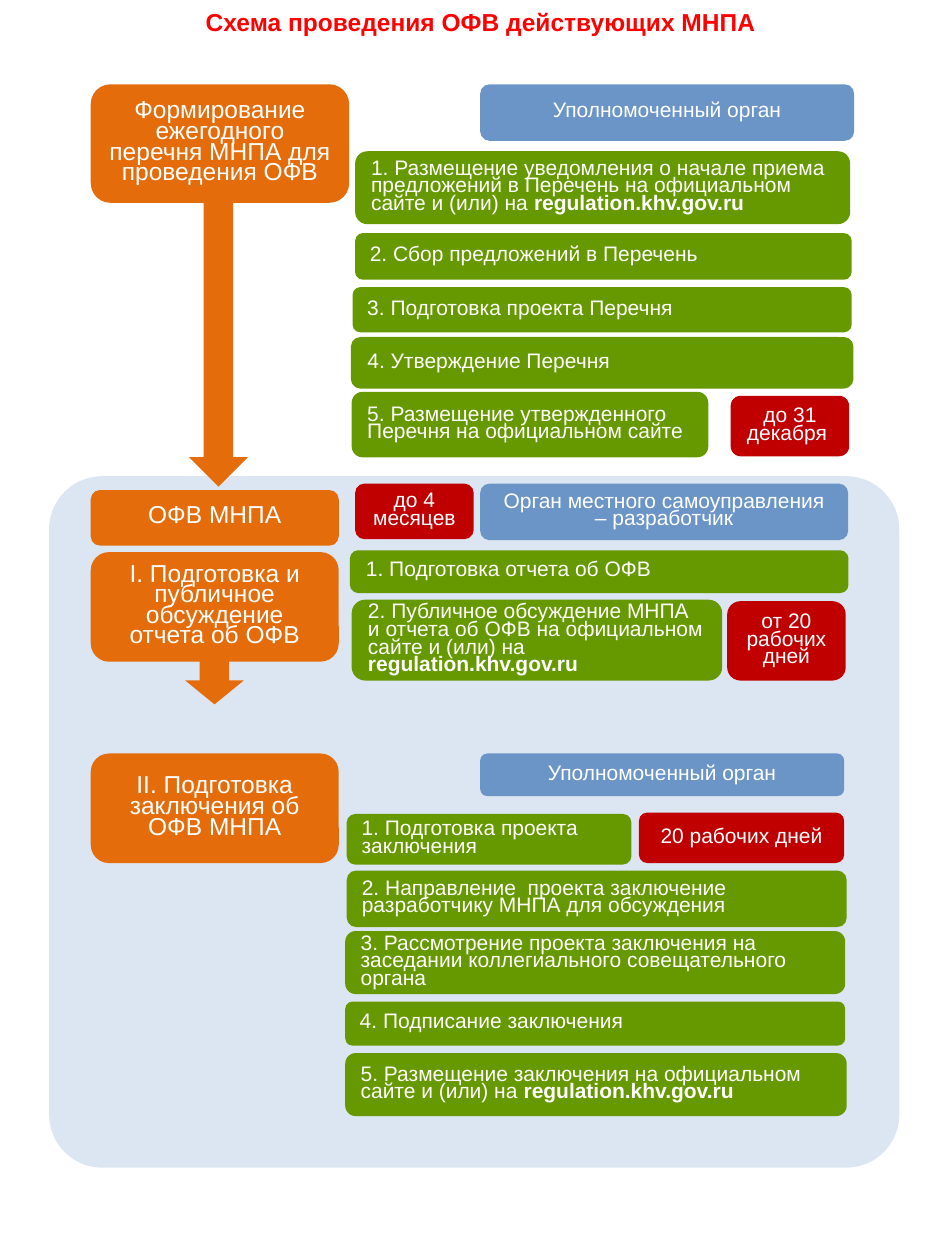
from typing import NamedTuple

from pptx import Presentation
from pptx import util as u
from pptx.dml.color import RGBColor
from pptx.enum import shapes, text

COLORS = {
    "panel": "DCE6F2",
    "stage": "E46C0A",
    "step": "669900",
    "body": "6B95C7",
    "term": "C00000",
    "title": "FF0000",
    "white": "FFFFFF",
}
SITE = "regulation.khv.gov.ru"
TITLE = "Схема проведения ОФВ действующих МНПА"
STAGE_LEFT, BODY_LEFT, TERM_WIDTH = 1.83, 9.68, 2.39
ARROW_WIDTH = 1.19


class Card(NamedTuple):
    kind: str
    left: float
    top: float
    width: float
    height: float
    words: str
    strong: str = ""
    outline: float = 0


class Arrow(NamedTuple):
    left: float
    top: float
    height: float


CARDS = [
    Card("stage", STAGE_LEFT, 1.7, 5.21, 2.39, "Формирование ежегодного перечня МНПА для проведения ОФВ"),
    Card("stage", STAGE_LEFT, 9.88, 5, 1.12, "ОФВ МНПА"),
    Card("stage", STAGE_LEFT, 11.13, 5, 2.21, "I. Подготовка и публичное обсуждение отчета об ОФВ"),
    Card("stage", STAGE_LEFT, 15.19, 5, 2.21, "II. Подготовка заключения об ОФВ МНПА"),
    Card("body", BODY_LEFT, 1.7, 7.54, 1.14, "Уполномоченный орган"),
    Card("step", 7.16, 3.05, 9.98, 1.47,
         "1. Размещение уведомления о начале приема предложений в Перечень на официальном сайте и (или) на ", SITE),
    Card("step", 7.16, 4.7, 10.01, 0.94, "2. Сбор предложений в Перечень"),
    Card("step", 7.11, 5.79, 10.06, 0.91, "3. Подготовка проекта Перечня"),
    Card("step", 7.11, 6.83, 10.06, 0.97, "4. Утверждение Перечня", outline=2),
    Card("step", 7.09, 7.9, 7.19, 1.32, "5. Размещение утвержденного Перечня на официальном сайте"),
    Card("term", 14.73, 7.98, TERM_WIDTH, 1.22, "до 31 декабря "),
    Card("term", 7.16, 9.75, TERM_WIDTH, 1.12, "до 4 месяцев"),
    Card("body", BODY_LEFT, 9.75, 7.42, 1.14, "Орган местного самоуправления – разработчик"),
    Card("step", 7.09, 11.13, 9.98, 0.79, "1. Подготовка отчета об ОФВ", outline=2),
    Card("step", 7.09, 12.09, 7.47, 1.63,
         "2. Публичное обсуждение МНПА и отчета об ОФВ на официальном сайте и (или) на ", SITE),
    Card("term", 14.66, 12.12, TERM_WIDTH, 1.6, "от 20 рабочих дней"),
    Card("body", BODY_LEFT, 15.19, 7.34, 0.86, "Уполномоченный орган"),
    Card("step", 6.99, 16.41, 5.74, 1.02, "1. Подготовка проекта заключения"),
    Card("term", 12.88, 16.38, 4.14, 1.02, "20 рабочих дней"),
    Card("step", 6.99, 17.55, 10.08, 1.14, "2. Направление  проекта заключение разработчику МНПА для обсуждения"),
    Card("step", 6.96, 18.77, 10.08, 1.27,
         "3. Рассмотрение проекта заключения на заседании коллегиального совещательного органа"),
    Card("step", 6.96, 20.19, 10.08, 0.89, "4. Подписание заключения"),
    Card("step", 6.96, 21.23, 10.11, 1.27, "5. Размещение заключения на официальном сайте и (или) на ", SITE),
]
ARROWS = [Arrow(3.81, 4.09, 5.72), Arrow(3.73, 13.23, 0.97)]


def color(name: str) -> RGBColor:
    return RGBColor.from_string(COLORS[name])


def add_block(slide, preset, kind: str, left: float, top: float, width: float, height: float):
    block = slide.shapes.add_shape(preset, u.Cm(left), u.Cm(top), u.Cm(width), u.Cm(height))
    block.shadow.inherit = False
    block.fill.solid()
    block.fill.fore_color.rgb = color(kind)
    block.line.fill.background()
    return block


def add_span(para, words: str, size: int, ink: str, bold: bool = False) -> None:
    span = para.add_run()
    span.text = words
    span.font.name = "Arial"
    span.font.size = u.Pt(size)
    span.font.bold = bold
    span.font.color.rgb = color(ink)


def add_card(slide, card: Card) -> None:
    box = add_block(slide, shapes.MSO_SHAPE.ROUNDED_RECTANGLE, *card[:5])
    if card.outline:
        box.line.color.rgb = color(card.kind)
        box.line.width = u.Pt(card.outline)
    box.text_frame.word_wrap = True
    box.text_frame.vertical_anchor = text.MSO_ANCHOR.MIDDLE
    para = box.text_frame.paragraphs[0]
    para.alignment = text.PP_ALIGN.LEFT if card.kind == "step" else text.PP_ALIGN.CENTER
    para.line_spacing = 0.7
    size = 14 if card.kind == "stage" else 12
    add_span(para, card.words, size, "white")
    if card.strong:
        add_span(para, card.strong, size, "white", bold=True)


def format_title(slide) -> None:
    title = slide.shapes.title
    title.left, title.top = u.Cm(1.12), u.Cm(0.18)
    title.width, title.height = u.Cm(17.14), u.Cm(0.69)
    title.text_frame.word_wrap = True
    title.text_frame.auto_size = text.MSO_AUTO_SIZE.SHAPE_TO_FIT_TEXT
    title.text_frame.vertical_anchor = text.MSO_ANCHOR.TOP
    para = title.text_frame.paragraphs[0]
    para.alignment = text.PP_ALIGN.CENTER
    para.line_spacing = 0.7
    para.space_before = u.Pt(0)
    add_span(para, TITLE, 14, "title", bold=True)


def main() -> None:
    deck = Presentation()
    deck.slide_width, deck.slide_height = u.Cm(19.05), u.Cm(25.4)
    slide = deck.slides.add_slide(deck.slide_layouts[5])
    format_title(slide)
    panel = add_block(slide, shapes.MSO_SHAPE.ROUNDED_RECTANGLE, "panel", 0.99, 9.6, 17.14, 13.94)
    panel.adjustments[0] = 0.077
    for arrow in ARROWS:
        add_block(slide, shapes.MSO_SHAPE.DOWN_ARROW, "stage", arrow.left, arrow.top, ARROW_WIDTH, arrow.height)
    for card in CARDS:
        add_card(slide, card)
    deck.save("out.pptx")


if __name__ == "__main__":
    main()
